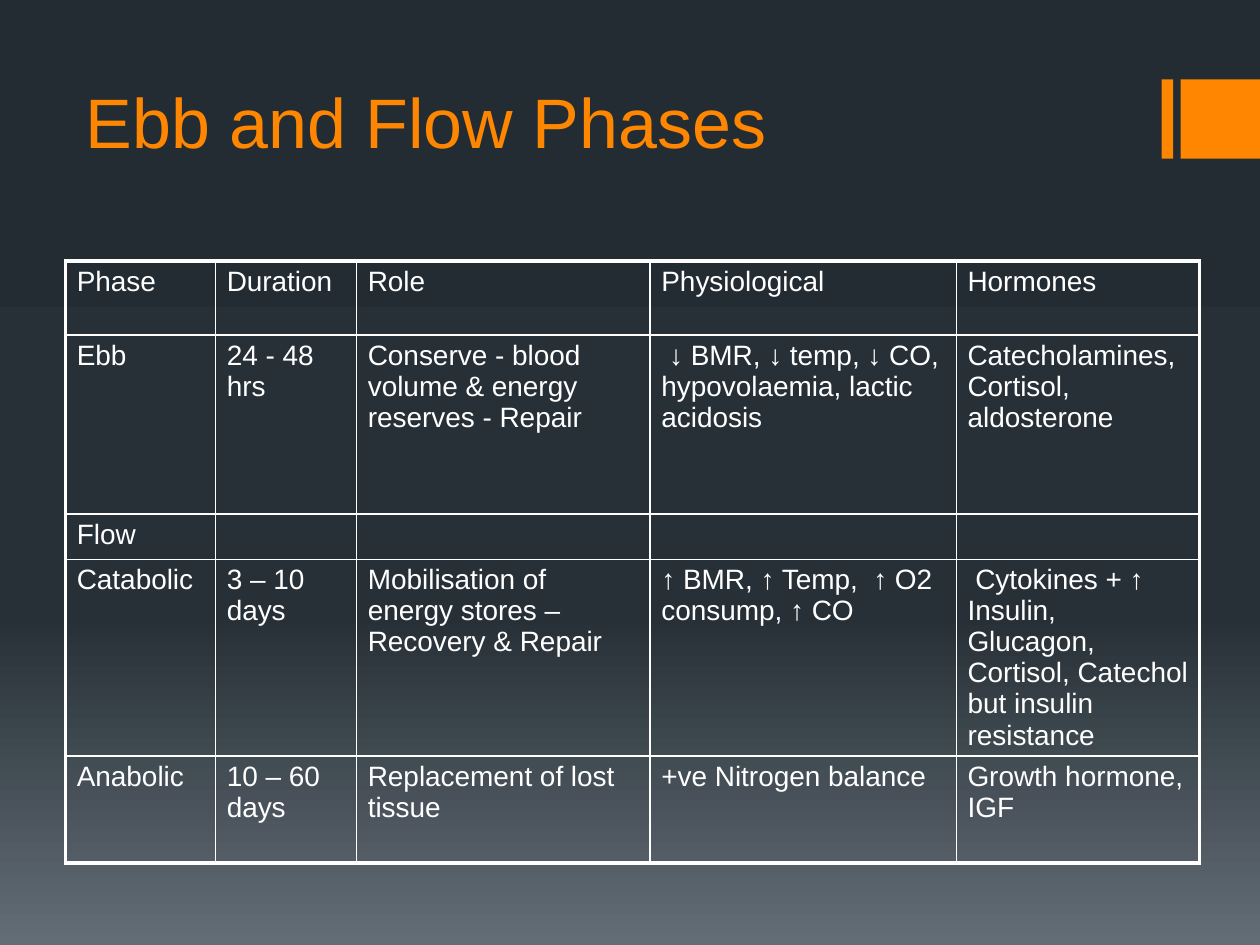
from copy import deepcopy
from dataclasses import dataclass

from lxml.etree import SubElement
from pptx import Presentation
from pptx.dml.color import RGBColor
from pptx.enum.shapes import MSO_SHAPE
from pptx.enum.text import MSO_ANCHOR, PP_ALIGN
from pptx.oxml.ns import qn
from pptx.slide import Slide
from pptx.table import _Cell
from pptx.util import Inches, Pt


@dataclass(frozen=True)
class Theme:
    font: str = "Arial"
    accent: str = "FF8600"
    ink: str = "FFFFFF"
    sky: tuple = ((0, "242C33"), (0.65, "273037"), (1, "636D76"))
    head: float = 40
    body: float = 16
    thin: float = 1
    thick: float = 2.25


@dataclass(frozen=True)
class Bar:
    left: float
    width: float
    top: float = 0.63
    height: float = 0.63


THEME = Theme()
BARS = (Bar(9.22, 0.09), Bar(9.37, 0.63))
WIDTHS = (1.19, 1.12, 2.33, 2.43, 1.93)
HEIGHTS = (0.59, 1.42, 0.36, 1.42, 0.85)
ROWS = (
    ("Phase", "Duration", "Role", "Physiological", "Hormones"),
    ("Ebb", "24 - 48 hrs", "Conserve - blood volume & energy reserves - Repair",
     " ↓ BMR, ↓ temp, ↓ CO, hypovolaemia, lactic acidosis",
     "Catecholamines, Cortisol, aldosterone"),
    ("Flow", "", "", "", ""),
    ("Catabolic", "3 – 10 days",
     "Mobilisation of energy stores – Recovery & Repair",
     "↑ BMR, ↑ Temp,  ↑ O2 consump, ↑ CO",
     " Cytokines + ↑  Insulin, Glucagon, Cortisol, Catechol but insulin resistance"),
    ("Anabolic", "10 – 60 days", "Replacement of lost tissue",
     "+ve Nitrogen balance", "Growth hormone, IGF"),
)


def paint_sky(slide: Slide) -> None:
    fill = slide.background.fill
    fill.gradient()
    fill.gradient_angle = 270
    stops = slide.element.find(".//" + qn("a:gsLst"))
    stops.append(deepcopy(stops[-1]))
    for stop, (place, tone) in zip(fill.gradient_stops, THEME.sky):
        stop.position = place
        stop.color.rgb = RGBColor.from_string(tone)


def style(para, size: float, tone: str) -> None:
    para.font.name = THEME.font
    para.font.size = Pt(size)
    para.font.color.rgb = RGBColor.from_string(tone)


def draw_bar(slide: Slide, bar: Bar) -> None:
    shape = slide.shapes.add_shape(
        MSO_SHAPE.RECTANGLE, Inches(bar.left), Inches(bar.top),
        Inches(bar.width), Inches(bar.height))
    shape.shadow.inherit = False
    shape.fill.solid()
    shape.fill.fore_color.rgb = RGBColor.from_string(THEME.accent)
    shape.line.fill.background()


def set_title(slide: Slide, text: str) -> None:
    title = slide.shapes.title
    title.left, title.top = Inches(0.58), Inches(0.09)
    title.width, title.height = Inches(9), Inches(1.25)
    frame = title.text_frame
    frame.text = text
    frame.vertical_anchor = MSO_ANCHOR.BOTTOM
    para = frame.paragraphs[0]
    para.alignment = PP_ALIGN.LEFT
    style(para, THEME.head, THEME.accent)


def edge_cell(cell: _Cell, row: int, col: int) -> None:
    outer = {
        "a:lnL": col == 0,
        "a:lnR": col == len(WIDTHS) - 1,
        "a:lnT": row == 0,
        "a:lnB": row == len(HEIGHTS) - 1,
    }
    props = cell._tc.get_or_add_tcPr()
    for tag, edge in outer.items():
        width = Pt(THEME.thick if edge else THEME.thin)
        line = SubElement(props, qn(tag), w=str(width))
        solid = SubElement(line, qn("a:solidFill"))
        SubElement(solid, qn("a:srgbClr"), val=THEME.ink)


def fill_cell(cell: _Cell, text: str) -> None:
    cell.text = text
    cell.margin_left = cell.margin_right = Inches(0.09)
    cell.margin_top = cell.margin_bottom = Inches(0.04)
    cell.fill.background()
    style(cell.text_frame.paragraphs[0], THEME.body, THEME.ink)


def draw_table(slide: Slide) -> None:
    table = slide.shapes.add_table(
        len(ROWS), len(WIDTHS), Inches(0.52), Inches(2.07),
        Inches(sum(WIDTHS)), Inches(sum(HEIGHTS))).table
    table.first_row = table.horz_banding = False
    for column, width in zip(table.columns, WIDTHS):
        column.width = Inches(width)
    for line, height in zip(table.rows, HEIGHTS):
        line.height = Inches(height)
    for row, texts in enumerate(ROWS):
        for col, text in enumerate(texts):
            cell = table.cell(row, col)
            edge_cell(cell, row, col)
            fill_cell(cell, text)


def main() -> None:
    deck = Presentation()
    deck.slide_width, deck.slide_height = Inches(10), Inches(7.5)
    slide = deck.slides.add_slide(deck.slide_layouts.get_by_name("Title Only"))
    paint_sky(slide)
    for bar in BARS:
        draw_bar(slide, bar)
    set_title(slide, "Ebb and Flow Phases")
    draw_table(slide)
    deck.save("out.pptx")


if __name__ == "__main__":
    main()
